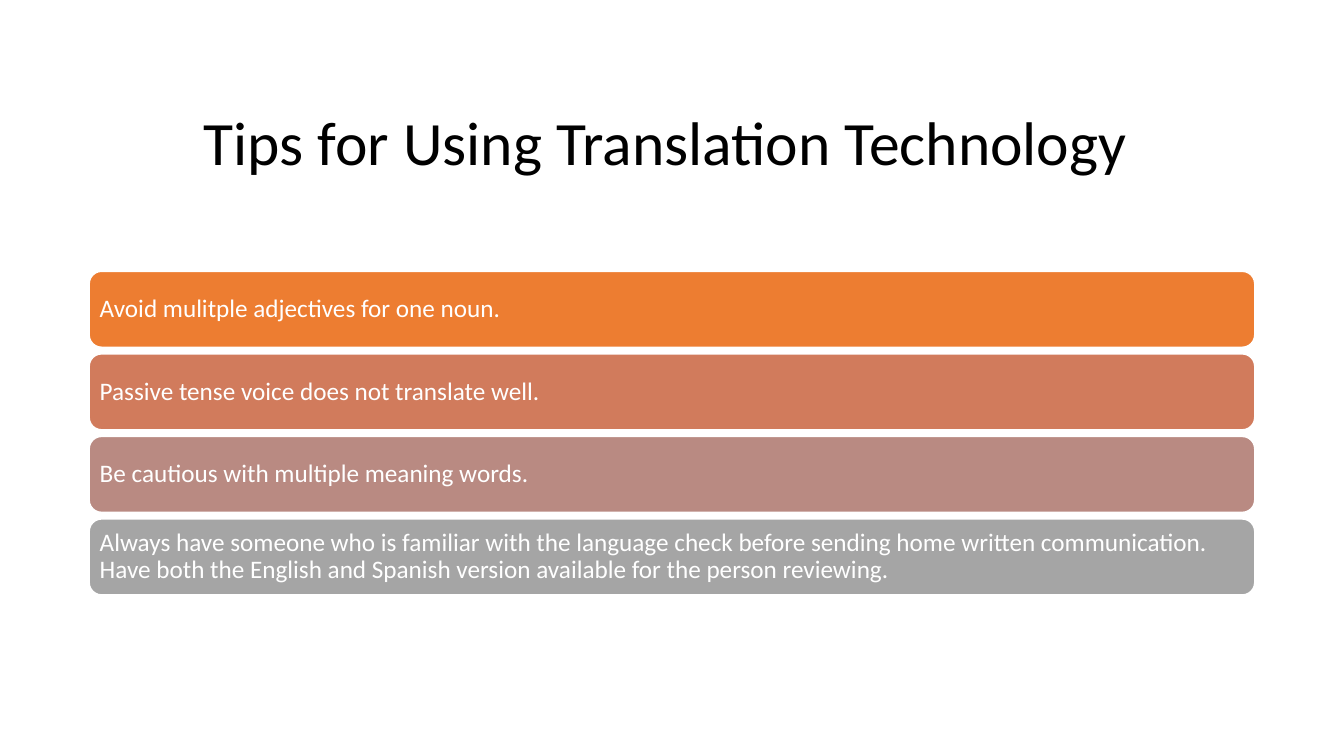
from dataclasses import dataclass

from pptx import Presentation
from pptx.dml.color import RGBColor
from pptx.enum.shapes import MSO_SHAPE as Shape
from pptx.enum.text import MSO_ANCHOR as Anchor, MSO_AUTO_SIZE as AutoSize, PP_ALIGN as Align
from pptx.util import Cm, Pt

# Content
HEADING = "Tips for Using Translation Technology"
TIPS = [
    ("Avoid mulitple adjectives for one noun.", "ED7D31"),
    ("Passive tense voice does not translate well.", "D17B5C"),
    ("Be cautious with multiple meaning words.", "B98A82"),
    ("Always have someone who is familiar with the language check before sending "
     "home written communication. Have both the English and Spanish version "
     "available for the person reviewing.", "A5A5A5"),
]


@dataclass(frozen=True)
class Theme:
    font: str = "Calibri"
    heading_color: str = "000000"
    tip_color: str = "FFFFFF"
    outline: str = "FFFFFF"
    heading_size: float = 44
    tip_size: float = 18
    outline_width: float = 1.5
    line_spacing: float = 0.9


THEME = Theme()

# Layout
BAR_LEFT, BAR_TOP = Cm(2.24), Cm(6.83)
BAR_WIDTH, BAR_HEIGHT = Cm(29.39), Cm(1.93)
BAR_PITCH = Cm(2.08)
BAR_INSET = Cm(0.18)


def write(frame, text, size, color):
    """Fill a frame with one left-aligned, vertically centred paragraph."""
    frame.text = text
    frame.word_wrap = True
    frame.auto_size = AutoSize.NONE
    frame.vertical_anchor = Anchor.MIDDLE
    paragraph = frame.paragraphs[0]
    paragraph.alignment = Align.LEFT
    paragraph.line_spacing = THEME.line_spacing
    font = paragraph.runs[0].font
    font.name = THEME.font
    font.size = Pt(size)
    font.color.rgb = RGBColor.from_string(color)


def add_tip(slide, row, text, color):
    bar = slide.shapes.add_shape(Shape.ROUNDED_RECTANGLE, BAR_LEFT,
                                 BAR_TOP + row * BAR_PITCH, BAR_WIDTH, BAR_HEIGHT)
    bar.shadow.inherit = False
    bar.fill.solid()
    bar.fill.fore_color.rgb = RGBColor.from_string(color)
    bar.line.color.rgb = RGBColor.from_string(THEME.outline)
    bar.line.width = Pt(THEME.outline_width)
    frame = bar.text_frame
    frame.margin_left = frame.margin_right = BAR_INSET
    frame.margin_top = frame.margin_bottom = BAR_INSET
    write(frame, text, THEME.tip_size, THEME.tip_color)


def main():
    deck = Presentation()
    deck.slide_width, deck.slide_height = Cm(33.87), Cm(19.05)
    slide = deck.slides.add_slide(deck.slide_layouts.get_by_name("Title Only"))

    # Heading
    heading = slide.shapes.title
    heading.left, heading.top = Cm(4.88), Cm(2.21)
    heading.width, heading.height = Cm(24.1), Cm(2.92)
    write(heading.text_frame, HEADING, THEME.heading_size, THEME.heading_color)

    # Tip bars
    for row, (text, color) in enumerate(TIPS):
        add_tip(slide, row, text, color)

    deck.save("out.pptx")


if __name__ == "__main__":
    main()
